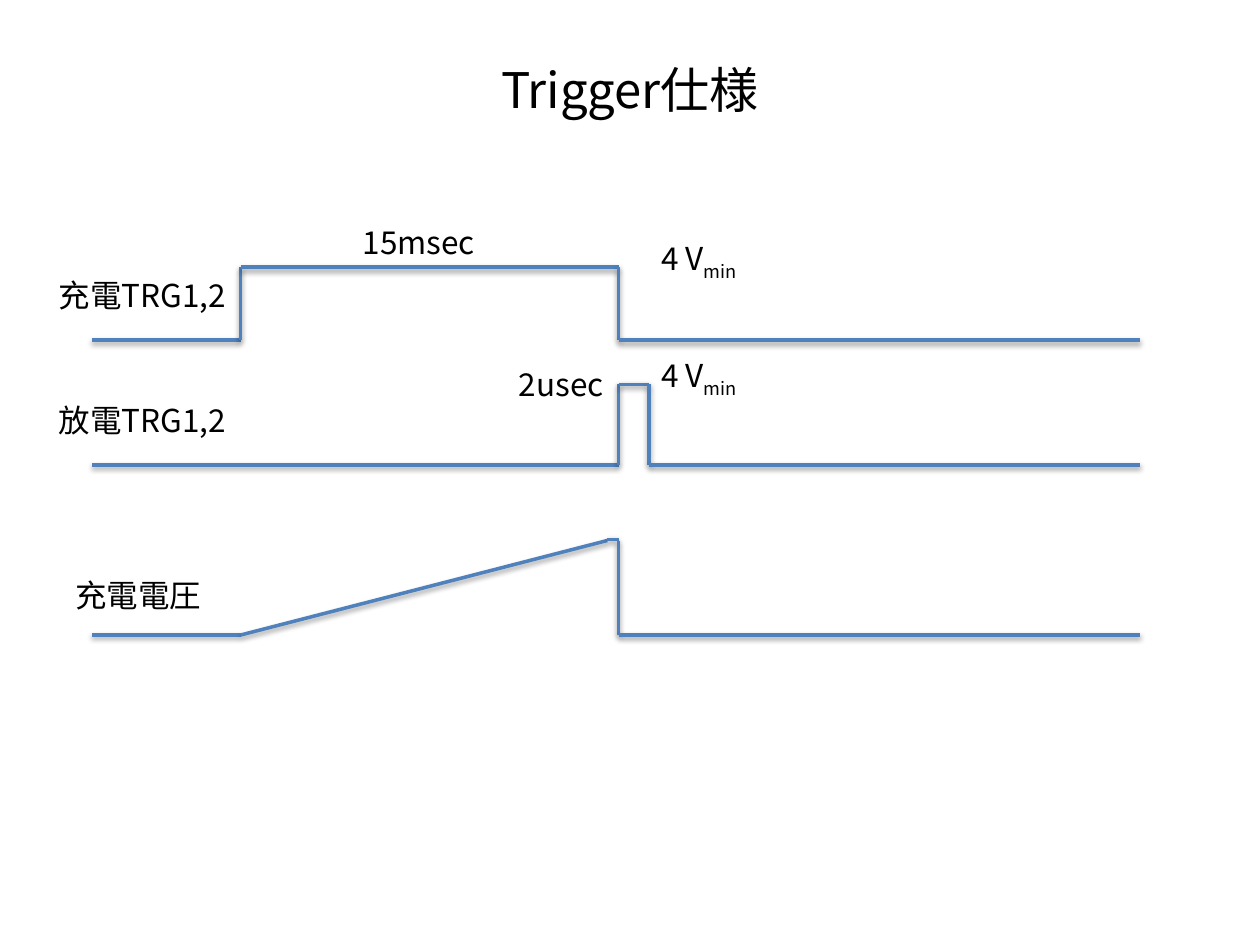
from itertools import pairwise

from lxml.etree import SubElement
from pptx import Presentation
from pptx.dml.color import RGBColor
from pptx.enum.shapes import MSO_CONNECTOR as Connector
from pptx.enum.text import MSO_ANCHOR as Anchor, MSO_AUTO_SIZE as AutoSize, PP_ALIGN as Align
from pptx.oxml.ns import qn
from pptx.util import Inches, Pt

FONT = "Noto Sans CJK JP"
BLACK, BLUE = "000000", "4F81BD"

# Shared times on the horizontal axis
START, CHARGE, FULL, FIRE, FIRE_END, END = 0.73, 1.91, 4.82, 4.91, 5.15, 9.05
# (low, high) level of each signal
CHARGE_LOW, CHARGE_HIGH = 2.7, 2.12
FIRE_LOW, FIRE_HIGH = 3.69, 3.05
VOLT_LOW, VOLT_HIGH = 5.04, 4.29
VOLT_PEAK = 4.28

TRACES = [
    [(START, CHARGE_LOW), (CHARGE, CHARGE_LOW), (CHARGE, CHARGE_HIGH),
     (FIRE, CHARGE_HIGH), (FIRE, CHARGE_LOW), (END, CHARGE_LOW)],
    [(START, FIRE_LOW), (FIRE, FIRE_LOW), (FIRE, FIRE_HIGH),
     (FIRE_END, FIRE_HIGH), (FIRE_END, FIRE_LOW), (END, FIRE_LOW)],
    [(START, VOLT_LOW), (CHARGE, VOLT_LOW), (FULL, VOLT_HIGH)],
    [(FULL, VOLT_PEAK), (FIRE, VOLT_PEAK)],
    [(FIRE, VOLT_HIGH), (FIRE, VOLT_LOW), (END, VOLT_LOW)],
]

# (text, subscript, left, top, width)
LABELS = [
    ("充電TRG1,2", "", 0.37, 2.14, 1.63),
    ("放電TRG1,2", "", 0.37, 3.13, 1.63),
    ("充電電圧", "", 0.5, 4.52, 1.21),
    ("15msec", "", 2.78, 1.72, 1.16),
    ("2usec", "", 4.02, 2.85, 0.92),
    ("4 V", "min", 5.15, 1.85, 0.93),
    ("4 V", "min", 5.15, 2.78, 0.93),
]
LABEL_HEIGHT = 0.4


def color(hex_string):
    return RGBColor.from_string(hex_string)


def add_text(page, text, left, top, width, height, size, subscript=""):
    box = page.shapes.add_textbox(*map(Inches, (left, top, width, height)))
    para = box.text_frame.paragraphs[0]
    para.font.size = Pt(size)
    para.font.color.rgb = color(BLACK)
    para.font.name = FONT
    for part in filter(None, (text, subscript)):
        span = para.add_run()
        span.text = part
        properties = span._r.get_or_add_rPr()
        SubElement(properties, qn("a:ea"), typeface=FONT)
        if part == subscript:
            properties.set("baseline", "-25000")
    return box


def add_shadow(line):
    effects = SubElement(line._element.spPr, qn("a:effectLst"))
    shadow = SubElement(effects, qn("a:outerShdw"), blurRad=str(Pt(3.1)),
                        dist=str(Pt(1.6)), dir="5400000", rotWithShape="0")
    tint = SubElement(shadow, qn("a:srgbClr"), val=BLACK)
    SubElement(tint, qn("a:alpha"), val="38000")


def add_trace(page, points):
    for start, end in pairwise(points):
        line = page.shapes.add_connector(Connector.STRAIGHT, *map(Inches, start + end))
        line.line.color.rgb = color(BLUE)
        line.line.width = Pt(2)
        add_shadow(line)


def main():
    deck = Presentation()
    deck.slide_width, deck.slide_height = Inches(10), Inches(7.5)
    page = deck.slides.add_slide(deck.slide_layouts[6])

    title = add_text(page, "Trigger仕様", 0.5, 0.08, 9, 1.25, 28).text_frame
    title.word_wrap = True
    title.vertical_anchor = Anchor.MIDDLE
    title.paragraphs[0].alignment = Align.CENTER

    for points in TRACES:
        add_trace(page, points)
    for text, subscript, left, top, width in LABELS:
        frame = add_text(page, text, left, top, width, LABEL_HEIGHT, 18, subscript).text_frame
        frame.word_wrap = False
        frame.auto_size = AutoSize.SHAPE_TO_FIT_TEXT

    deck.save("out.pptx")


if __name__ == "__main__":
    main()
